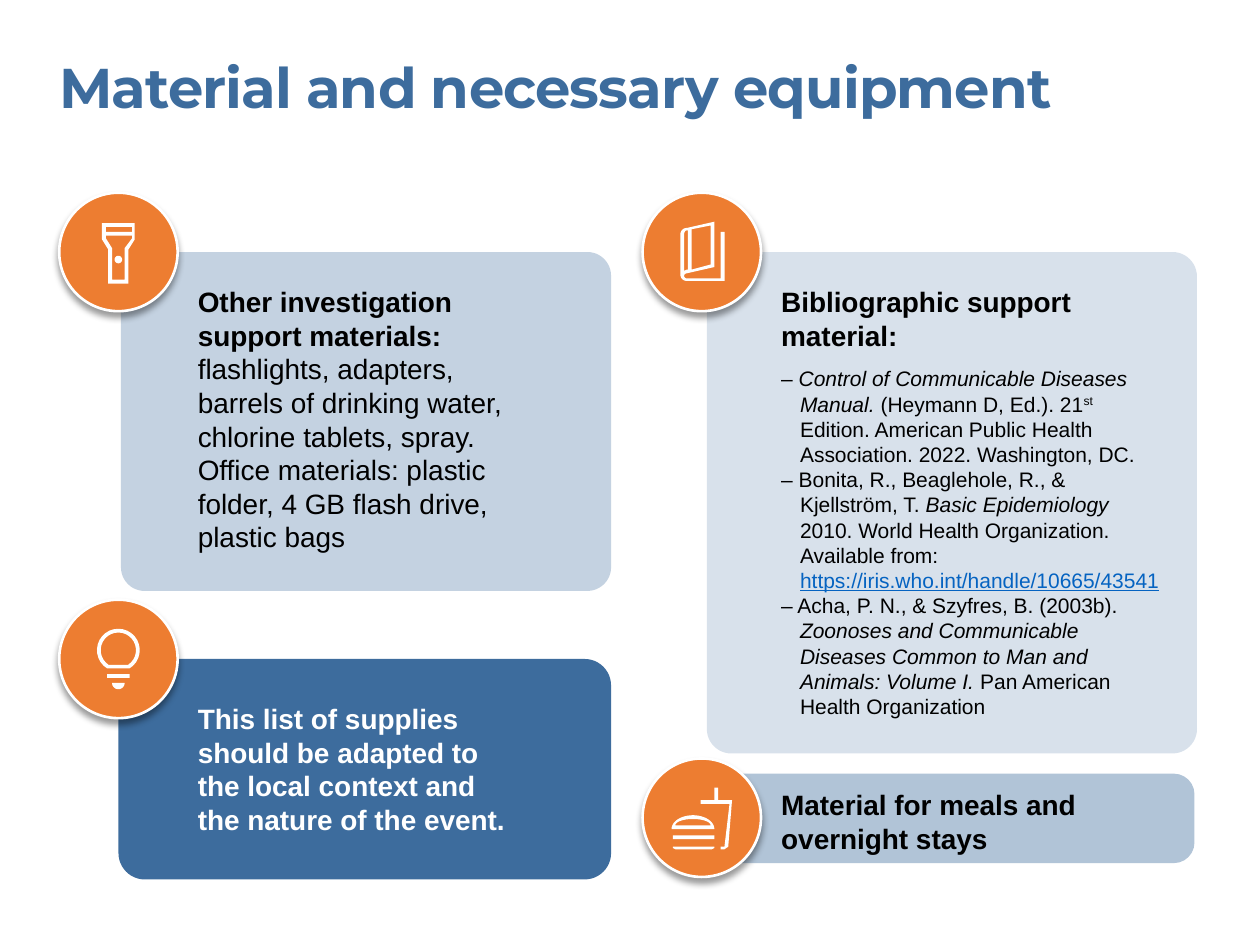
import math
import pptx
import pptx.dml.color
import pptx.enum.shapes
import pptx.enum.text
import pptx.oxml
import pptx.oxml.ns
import pptx.util
from pptx.util import Inches

COLORS = {"blue": "3D6C9D", "orange": "ED7D31", "white": "FFFFFF", "black": "000000", "link": "0563C1"}
SHAPES = pptx.enum.shapes.MSO_SHAPE
NAMESPACE = pptx.oxml.ns.nsdecls("a")


def color(name):
    return pptx.dml.color.RGBColor.from_string(COLORS[name])


def arc(center_x, center_y, radius_x, radius_y, start, end):
    angles = [math.radians(start + (end - start) * step / 24) for step in range(25)]
    return [(center_x + radius_x * math.cos(a), center_y + radius_y * math.sin(a)) for a in angles]


presentation = pptx.Presentation()
presentation.slide_width = Inches(10)
presentation.slide_height = Inches(7.5)
slide = presentation.slides.add_slide(presentation.slide_layouts[6])

panels = [
    (5.57, 6.14, 3.91, 0.71, 0.23, 40),
    (5.61, 2, 3.89, 3.98, 0.05, 20),
    (0.96, 2, 3.89, 2.69, 0.07, 30),
    (0.94, 5.23, 3.91, 1.75, 0.12, 100),
]
for left, top, width, height, corner, opacity in panels:
    panel = slide.shapes.add_shape(
        SHAPES.ROUNDED_RECTANGLE, Inches(left), Inches(top), Inches(width), Inches(height))
    panel.adjustments[0] = corner
    panel.shadow.inherit = False
    panel.line.fill.background()
    panel.fill.solid()
    panel.fill.fore_color.rgb = color("blue")
    if opacity < 100:
        fill_color = panel.fill._xPr.find(".//" + pptx.oxml.ns.qn("a:srgbClr"))
        fill_color.append(pptx.oxml.parse_xml(f'<a:alpha {NAMESPACE} val="{opacity * 1000}"/>'))

for left, top in [(0.47, 1.53), (0.47, 4.76), (5.1, 1.53), (5.1, 6.02)]:
    badge = slide.shapes.add_shape(SHAPES.OVAL, Inches(left), Inches(top), Inches(0.94), Inches(0.94))
    badge.fill.solid()
    badge.fill.fore_color.rgb = color("orange")
    badge.line.color.rgb = color("white")
    badge.line.width = pptx.util.Pt(1.5)
    badge.shadow.inherit = False
    effects = badge._element.spPr.find(pptx.oxml.ns.qn("a:effectLst"))
    effects.append(pptx.oxml.parse_xml(
        f'<a:outerShdw {NAMESPACE} blurRad="50800" dist="38100" dir="5400000" algn="t" rotWithShape="0">'
        f'<a:srgbClr val="{COLORS["black"]}"><a:alpha val="40000"/></a:srgbClr></a:outerShdw>'))

texts = [
    (0.47, 0.42, 8.55, 0.54, "Montserrat", 32, "blue", [
        [("Material and necessary equipment", "bold")]]),
    (1.57, 2.26, 2.77, 2.15, "Arial", 16, "black", [
        [("Other investigation support materials: ", "bold"),
         ("flashlights, adapters, barrels of drinking water, chlorine tablets, spray. "
          "Office materials: plastic folder, 4 GB flash drive, plastic bags", "")]]),
    (1.57, 5.57, 2.58, 1.08, "Arial", 16, "white", [
        [("This list of supplies should be adapted to the local context and "
          "the nature of the event.", "bold")]]),
    (6.2, 2.26, 3.03, 3.48, "Arial", 16, "black", [
        [("Bibliographic support material:", "bold")],
        [("– ", ""), ("Control of Communicable Diseases Manual. ", "italic"),
         ("(Heymann D, Ed.). 21", ""), ("st", "superscript"),
         (" Edition. American Public Health Association. 2022. Washington, DC.", "")],
        [("– Bonita, R., Beaglehole, R., & Kjellström, T. ", ""), ("Basic Epidemiology ", "italic"),
         ("2010. World Health Organization. Available from: ", ""),
         ("https://iris.who.int/handle/10665/43541", "link")],
        [("– Acha, P. N., & Szyfres, B. (2003b). ", ""),
         ("Zoonoses and Communicable Diseases Common to Man and Animals: Volume I.", "italic"),
         (" Pan American Health Organization", "")]]),
    (6.2, 6.25, 2.78, 0.54, "Arial", 16, "black", [
        [("Material for meals and overnight stays", "bold")]]),
]
for left, top, width, height, font_name, size, text_color, paragraphs in texts:
    box = slide.shapes.add_textbox(Inches(left), Inches(top), Inches(width), Inches(height))
    frame = box.text_frame
    frame.word_wrap = True
    frame.auto_size = pptx.enum.text.MSO_AUTO_SIZE.SHAPE_TO_FIT_TEXT
    frame.margin_left = frame.margin_right = frame.margin_top = frame.margin_bottom = 0
    for index, runs in enumerate(paragraphs):
        paragraph = frame.add_paragraph() if index else frame.paragraphs[0]
        if index:
            properties = paragraph._p.get_or_add_pPr()
            properties.set("marL", str(Inches(0.15)))
            properties.set("indent", str(Inches(-0.15)))
        elif len(paragraphs) > 1:
            paragraph.space_after = pptx.util.Pt(8)
        for text, style in runs:
            run = paragraph.add_run()
            run.text = text
            run.font.name = font_name
            run.font.size = pptx.util.Pt(12 if index else size)
            run.font.bold = style == "bold"
            run.font.italic = style == "italic"
            run.font.color.rgb = color("link" if style == "link" else text_color)
            if style == "link":
                run.font.underline = True
            if style == "superscript":
                run.font._element.set("baseline", "30000")
            if font_name == "Montserrat":
                run.font._element.set("spc", "-50")

flashlight = [
    [(0.86, 2.25), (0.86, 1.98), (0.81, 1.9), (0.81, 1.77),
     (1.07, 1.77), (1.07, 1.9), (1.02, 1.98), (1.02, 2.25)],
    arc(0.94, 2.06, 0.03, 0.03, 0, 360),
    [(0.84, 1.84), (1.05, 1.84), (1.05, 1.8), (0.84, 1.8)],
    [(1.05, 1.87), (0.84, 1.87), (0.84, 1.89), (0.89, 1.97),
     (0.89, 2.22), (0.99, 2.22), (0.99, 1.97), (1.05, 1.89)],
]
light_bulb = [
    arc(0.94, 5.42, 0.05, 0.05, 0, 180),
    [(0.85, 5.38), (0.85, 5.35), (1.03, 5.35), (1.03, 5.38)],
    arc(0.94, 5.16, 0.17, 0.17, 121, 419),
    arc(0.94, 5.16, 0.14, 0.14, 124, 416),
]
book = [
    arc(5.45, 2.18, 0.05, 0.05, 90, 180) + arc(5.45, 1.86, 0.05, 0.05, 180, 270)
    + [(5.67, 1.76), (5.67, 2.12)] + arc(5.45, 2.19, 0.02, 0.02, 270, 90)
    + [(5.72, 2.21), (5.72, 1.84), (5.75, 1.84), (5.75, 2.23)],
    [(5.49, 2.14), (5.64, 2.1), (5.64, 1.79), (5.49, 1.82)],
    [(5.46, 2.14), (5.46, 1.83)] + arc(5.45, 1.86, 0.02, 0.03, 270, 180) + [(5.43, 2.15), (5.45, 2.14)],
]
meal = [
    arc(5.5, 6.58, 0.17, 0.11, 180, 360),
    arc(5.5, 6.55, 0.14, 0.05, 180, 360),
    [(5.34, 6.66), (5.34, 6.63), (5.67, 6.63), (5.67, 6.66)],
    [(5.72, 6.74), (5.72, 6.72), (5.75, 6.72), (5.79, 6.38), (5.56, 6.38), (5.56, 6.35), (5.67, 6.35),
     (5.67, 6.25), (5.7, 6.25), (5.7, 6.35), (5.81, 6.35), (5.78, 6.72), (5.75, 6.74)],
    [(5.34, 6.72), (5.67, 6.72), (5.67, 6.73), (5.65, 6.74), (5.36, 6.74), (5.34, 6.73)],
]
for icon in [flashlight, light_bulb, book, meal]:
    contours = [[(Inches(x), Inches(y)) for x, y in contour] for contour in icon]
    builder = slide.shapes.build_freeform(*contours[0][0])
    for contour in contours:
        if contour is not contours[0]:
            builder.move_to(*contour[0])
        builder.add_line_segments(contour[1:], close=True)
    shape = builder.convert_to_shape()
    shape.shadow.inherit = False
    shape.fill.solid()
    shape.fill.fore_color.rgb = color("white")
    shape.line.fill.background()

presentation.save("out.pptx")
